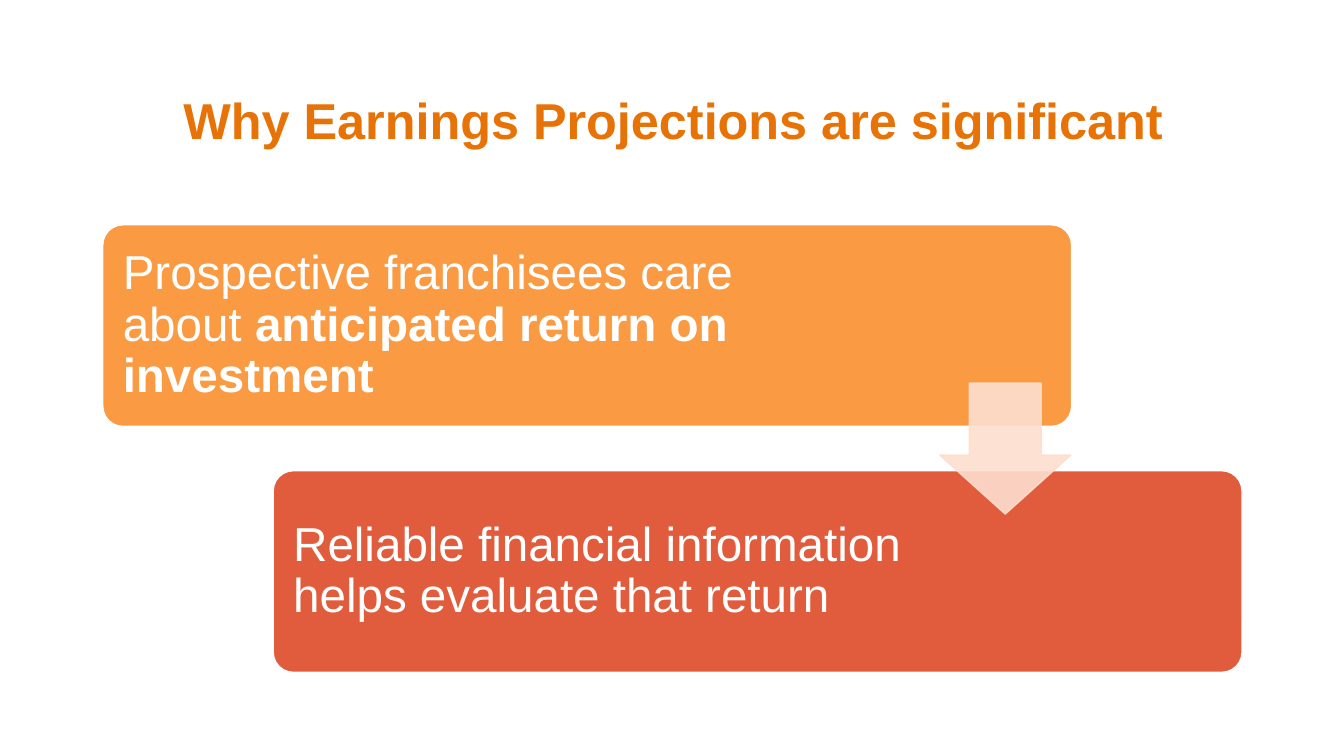
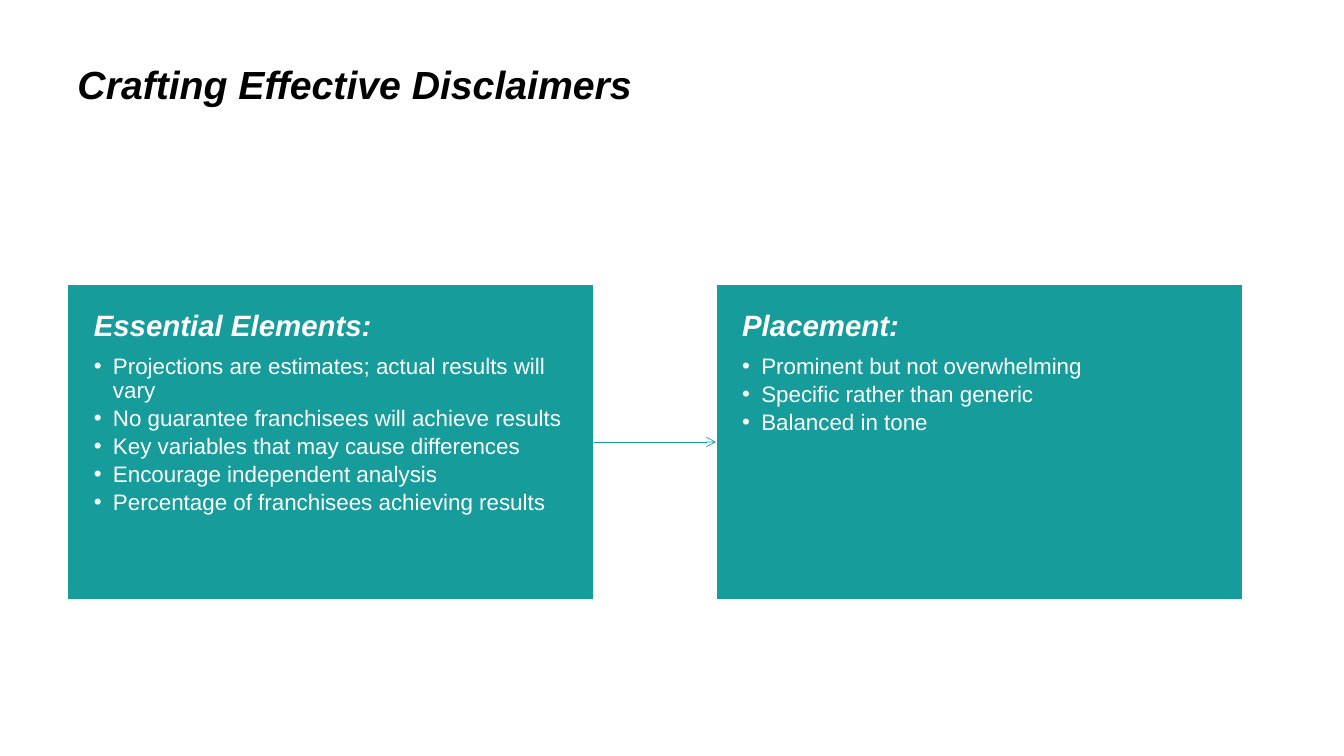
from dataclasses import dataclass
from lxml.etree import SubElement as Sub
from pptx import Presentation
from pptx.dml.color import RGBColor as Rgb
from pptx.enum.shapes import MSO_CONNECTOR as Link, MSO_SHAPE as Form
from pptx.enum.text import MSO_ANCHOR as Anchor, PP_ALIGN as Align
from pptx.oxml.ns import qn
from pptx.shapes.autoshape import Shape
from pptx.slide import Slide
from pptx.text.text import TextFrame as Frame, _Paragraph as Para
from pptx.util import Inches, Pt

FONT = "Arial"
HUES = {
    "white": "FFFFFF",
    "black": "000000",
    "title": "E77206",
    "orange": "FA9A42",
    "red": "E15C3D",
    "peach": "FDDECF",
    "teal": "169C9A",
}
WIDE, HIGH = Inches(13.33), Inches(7.5)
LEAD = 0.9


@dataclass(frozen=True)
class Area:
    """Left, top, width and height in percent of the slide."""
    left: float
    top: float
    width: float
    height: float

    def shift(self, right: float, down: float = 0) -> "Area":
        return Area(self.left + right, self.top + down, self.width, self.height)

    def place(self) -> tuple[int, int, int, int]:
        return (int(WIDE * self.left / 100), int(HIGH * self.top / 100),
                int(WIDE * self.width / 100), int(HIGH * self.height / 100))


@dataclass(frozen=True)
class Style:
    size: float
    hue: str = "white"
    bold: bool = False
    slant: bool = False


@dataclass(frozen=True)
class Title:
    text: str
    area: Area
    style: Style
    align: Align
    anchor: Anchor


@dataclass(frozen=True)
class Step:
    plain: str
    strong: str
    hue: str
    inset: float


@dataclass(frozen=True)
class Card:
    head: str
    items: tuple[str, ...]


STEP = Area(7.65, 29.73, 72.09, 26.67)
STEP_DX, STEP_DY = 12.68, 32.53
ARROW = Area(69.92, 50.67, 9.75, 17.33)
CARD = Area(5.03, 37.6, 39.16, 41.73)
CARD_DX = 48.24

BODY, STRONG = Style(34), Style(34, bold=True)
HEAD, ITEM = Style(21, bold=True, slant=True), Style(16)

WHY = Title("Why Earnings Projections are significant",
            Area(12.53, 8, 75.17, 16.53), Style(36, "title", True),
            Align.CENTER, Anchor.MIDDLE)
CRAFT = Title("Crafting Effective Disclaimers",
              Area(5.03, 8, 87.4, 16.53), Style(28, "black", True, True),
              Align.LEFT, Anchor.TOP)
STEPS = (
    Step("Prospective franchisees care about ",
         "anticipated return on investment", "orange", 2.09),
    Step("Reliable financial information helps evaluate that return",
         "", "red", 3.14),
)
CARDS = (
    Card("Essential Elements:", (
        "Projections are estimates; actual results will vary",
        "No guarantee franchisees will achieve results",
        "Key variables that may cause differences",
        "Encourage independent analysis",
        "Percentage of franchisees achieving results",
    )),
    Card("Placement:", (
        "Prominent but not overwhelming",
        "Specific rather than generic",
        "Balanced in tone",
    )),
)


def tint(hue: str) -> Rgb:
    return Rgb.from_string(HUES[hue])


def format_run(run, style: Style) -> None:
    font = run.font
    font.name, font.size = FONT, Pt(style.size)
    font.bold, font.italic = style.bold, style.slant
    font.color.rgb = tint(style.hue)


def format_para(para: Para, style: Style, align: Align = Align.LEFT,
                after: float = 0) -> None:
    para.alignment, para.line_spacing = align, LEAD
    para.space_after = Pt(after)
    for run in para.runs:
        format_run(run, style)


def set_frame(frame: Frame, anchor: Anchor, left: float, top: float,
              right: float) -> None:
    frame.word_wrap, frame.vertical_anchor = True, anchor
    frame.margin_left, frame.margin_right = Inches(left), Inches(right)
    frame.margin_top = frame.margin_bottom = Inches(top)


def add_form(slide: Slide, form: Form, area: Area, fill: str, line: str,
             *adjust: float) -> Shape:
    shape = slide.shapes.add_shape(form, *area.place())
    shape.shadow.inherit = False
    shape.fill.solid()
    shape.fill.fore_color.rgb = tint(fill)
    shape.line.color.rgb = tint(line)
    shape.line.width = Pt(1)
    for index, value in enumerate(adjust):
        shape.adjustments[index] = value
    return shape


def add_title(slide: Slide, title: Title) -> None:
    frame = slide.shapes.add_textbox(*title.area.place()).text_frame
    set_frame(frame, title.anchor, 0.1, 0.05, 0.1)
    frame.text = title.text
    format_para(frame.paragraphs[0], title.style, title.align)


def add_step(slide: Slide, step: Step, area: Area) -> None:
    shape = add_form(slide, Form.ROUNDED_RECTANGLE, area, step.hue, "white", 0.1)
    frame = shape.text_frame
    set_frame(frame, Anchor.MIDDLE, 0.14, 0.14, step.inset)
    frame.text = step.plain
    para = frame.paragraphs[0]
    format_para(para, BODY)
    if step.strong:
        run = para.add_run()
        run.text = step.strong
        format_run(run, STRONG)


def add_arrow(slide: Slide) -> None:
    arrow = add_form(slide, Form.DOWN_ARROW, ARROW, "peach", "peach", 0.55, 0.45)
    for color in arrow.element.spPr.iter(qn("a:srgbClr")):
        Sub(color, qn("a:alpha"), val="90000")


def add_bullet(para: Para) -> None:
    props = para._p.get_or_add_pPr()
    props.set("marL", str(Inches(0.19)))
    props.set("indent", str(-Inches(0.19)))
    Sub(props, qn("a:buFont"), typeface=FONT)
    Sub(props, qn("a:buChar"), char="•")


def add_card(slide: Slide, card: Card, area: Area) -> Shape:
    shape = add_form(slide, Form.RECTANGLE, area, "teal", "white")
    frame = shape.text_frame
    set_frame(frame, Anchor.TOP, 0.26, 0.27, 0.26)
    frame.text = card.head
    format_para(frame.paragraphs[0], HEAD, after=8.4)
    for item in card.items:
        para = frame.add_paragraph()
        para.text = item
        format_para(para, ITEM, after=2.8)
        add_bullet(para)
    return shape


def join(slide: Slide, start: Shape, end: Shape) -> None:
    link = slide.shapes.add_connector(Link.STRAIGHT, 0, 0, 0, 0)
    link.begin_connect(start, 3)
    link.end_connect(end, 1)
    link.line.color.rgb = tint("teal")
    link.line.width = Pt(0.5)
    Sub(link.line._get_or_add_ln(), qn("a:tailEnd"), type="arrow")
    Sub(link.element.spPr, qn("a:effectLst"))


def main() -> None:
    deck = Presentation()
    deck.slide_width, deck.slide_height = WIDE, HIGH
    blank = deck.slide_layouts[6]

    slide = deck.slides.add_slide(blank)
    add_title(slide, WHY)
    for index, step in enumerate(STEPS):
        add_step(slide, step, STEP.shift(index * STEP_DX, index * STEP_DY))
    add_arrow(slide)

    slide = deck.slides.add_slide(blank)
    add_title(slide, CRAFT)
    first, last = [add_card(slide, card, CARD.shift(index * CARD_DX))
                   for index, card in enumerate(CARDS)]
    join(slide, first, last)

    deck.save("out.pptx")


if __name__ == "__main__":
    main()
